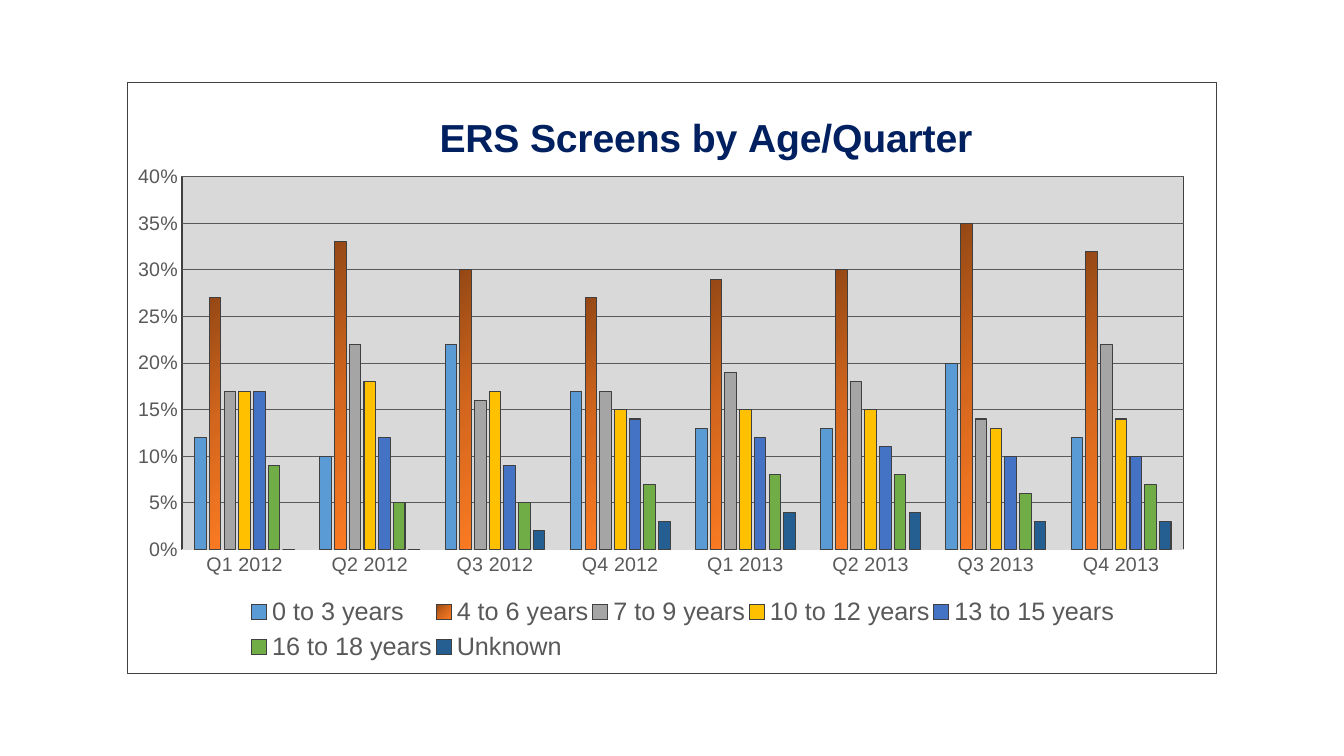
import pptx
import pptx.chart.data
import pptx.dml.color
import pptx.enum.chart
import pptx.oxml
import pptx.oxml.ns
import pptx.util

COLORS = {
    "title": "002060", "label": "595959", "outline": "404040",
    "plot": "D9D9D9", "paper": "FFFFFF",
    "sky": "5B9BD5", "gray": "A5A5A5", "gold": "FFC000",
    "blue": "4472C4", "green": "70AD47", "navy": "255E91",
    "rust": "954815", "amber": "D4671D", "orange": "FB7A23",
}
QUARTERS = [f"Q{quarter} {year}" for year in (2012, 2013) for quarter in range(1, 5)]
AGE_GROUPS = [
    ("0 to 3 years", ["sky"], (0.12, 0.10, 0.22, 0.17, 0.13, 0.13, 0.20, 0.12)),
    ("4 to 6 years", ["rust", "amber", "orange"],
     (0.27, 0.33, 0.30, 0.27, 0.29, 0.30, 0.35, 0.32)),
    ("7 to 9 years", ["gray"], (0.17, 0.22, 0.16, 0.17, 0.19, 0.18, 0.14, 0.22)),
    ("10 to 12 years", ["gold"], (0.17, 0.18, 0.17, 0.15, 0.15, 0.15, 0.13, 0.14)),
    ("13 to 15 years", ["blue"], (0.17, 0.12, 0.09, 0.14, 0.12, 0.11, 0.10, 0.10)),
    ("16 to 18 years", ["green"], (0.09, 0.05, 0.05, 0.07, 0.08, 0.08, 0.06, 0.07)),
    ("Unknown", ["navy"], (0, 0, 0.02, 0.03, 0.04, 0.04, 0.03, 0.03)),
]


def rgb(name):
    return pptx.dml.color.RGBColor.from_string(COLORS[name])


def apply(target, values):
    for name, value in values.items():
        setattr(target, name, value)


def chart_xml(markup):
    tag, rest = markup.split(">", 1)
    return pptx.oxml.parse_xml(f"{tag} {pptx.oxml.ns.nsdecls('c', 'a')}>{rest}")


class ChartSlide:
    font_name = "Arial"
    line_width = pptx.util.Pt(0.75)

    def __init__(self, deck):
        self.deck = deck
        self.page = deck.slides.add_slide(deck.slide_layouts[6])

    def style_text(self, font, size, color, bold=False):
        apply(font, {"name": self.font_name, "size": pptx.util.Pt(size), "bold": bold})
        font.color.rgb = rgb(color)

    def style_line(self, line, color):
        line.width = self.line_width
        line.color.rgb = rgb(color)

    def add_columns(self, left, top, width, height):
        data = pptx.chart.data.CategoryChartData(number_format="0%")
        data.categories = QUARTERS
        for name, _, values in AGE_GROUPS:
            data.add_series(name, values)
        across, down = self.deck.slide_width, self.deck.slide_height
        chart = self.page.shapes.add_chart(
            pptx.enum.chart.XL_CHART_TYPE.COLUMN_CLUSTERED,
            int(left * across), int(top * down),
            int(width * across), int(height * down), data).chart
        chart.font.name = "Calibri"
        chart.font.size = pptx.util.Pt(10)
        apply(chart.plots[0], {"gap_width": 219, "overlap": -27, "vary_by_categories": False})
        for series, (_, colors, _) in zip(chart.plots[0].series, AGE_GROUPS):
            self.fill_series(series, colors)
        return chart

    def fill_series(self, series, colors):
        self.style_line(series.format.line, "outline")
        series.invert_if_negative = False
        if len(colors) == 1:
            series.format.fill.solid()
            series.format.fill.fore_color.rgb = rgb(colors[0])
            return
        step = 100000 // (len(colors) - 1)
        stops = "".join(
            f'<a:gs pos="{index * step}"><a:srgbClr val="{COLORS[color]}"/></a:gs>'
            for index, color in enumerate(colors))
        gradient = chart_xml(
            f'<a:gradFill rotWithShape="1"><a:gsLst>{stops}</a:gsLst>'
            '<a:lin ang="2700000" scaled="0"/></a:gradFill>')
        series.format.element.xpath("c:spPr")[0].insert(0, gradient) if hasattr(
            series.format, "element") else series._element.xpath("c:spPr")[0].insert(0, gradient)

    def add_title(self, chart, text):
        chart.has_title = True
        chart.chart_title.include_in_layout = False
        para = chart.chart_title.text_frame.paragraphs[0]
        span = para.add_run()
        span.text = text
        self.style_text(span.font, 28, "title", bold=True)

    def add_axes(self, chart):
        none = pptx.enum.chart.XL_TICK_MARK.NONE
        for axis in (chart.category_axis, chart.value_axis):
            apply(axis, {"major_tick_mark": none, "minor_tick_mark": none})
            self.style_text(axis.tick_labels.font, 14, "label")
        self.style_line(chart.category_axis.format.line, "plot")
        values = chart.value_axis
        apply(values, {"minimum_scale": 0, "maximum_scale": 0.4, "major_unit": 0.05,
                       "has_major_gridlines": True})
        apply(values.tick_labels, {"number_format": "0%", "number_format_is_linked": False})
        values.format.line.fill.background()
        self.style_line(values.major_gridlines.format.line, "label")

    def add_legend(self, chart):
        chart.has_legend = True
        apply(chart.legend, {"position": pptx.enum.chart.XL_LEGEND_POSITION.BOTTOM,
                             "include_in_layout": False})
        self.style_text(chart.legend.font, 18, "label")

    def place(self, chart, part, index, shares, inner=False):
        element = chart.element.xpath(f"c:chart/c:{part}")[0]
        for old in element.xpath("c:layout"):
            element.remove(old)
        target = '<c:layoutTarget val="inner"/>' if inner else ""
        modes = "".join(f'<c:{axis}Mode val="edge"/>' for axis in "xy")
        sizes = "".join(f'<c:{name} val="{share}"/>' for name, share in zip("xywh", shares))
        element.insert(index, chart_xml(
            f"<c:layout><c:manualLayout>{target}{modes}{sizes}</c:manualLayout></c:layout>"))

    def area_style(self, fill):
        return chart_xml(
            f'<c:spPr><a:solidFill><a:srgbClr val="{COLORS[fill]}"/></a:solidFill>'
            f'<a:ln w="{self.line_width}"><a:solidFill>'
            f'<a:srgbClr val="{COLORS["outline"]}"/></a:solidFill></a:ln></c:spPr>')

    def add_backgrounds(self, chart):
        frame = chart.element.xpath("c:chart")[0]
        frame.addnext(self.area_style("paper"))
        frame.xpath("c:plotArea")[0].append(self.area_style("plot"))


def main():
    deck = pptx.Presentation()
    deck.slide_width = pptx.util.Inches(13.33)
    deck.slide_height = pptx.util.Inches(7.5)
    slide = ChartSlide(deck)
    chart = slide.add_columns(1.26 / 13.33, 0.81 / 7.5, 10.81 / 13.33, 5.88 / 7.5)
    slide.add_title(chart, "ERS Screens by Age/Quarter")
    slide.add_axes(chart)
    slide.add_legend(chart)
    slide.add_backgrounds(chart)
    slide.place(chart, "plotArea", 0, (0.05, 0.16, 0.92, 0.63), inner=True)
    slide.place(chart, "title", 1, (0.28, 0.04))
    slide.place(chart, "legend", 1, (0.11, 0.86, 0.8, 0.13))
    deck.save("out.pptx")


if __name__ == "__main__":
    main()
